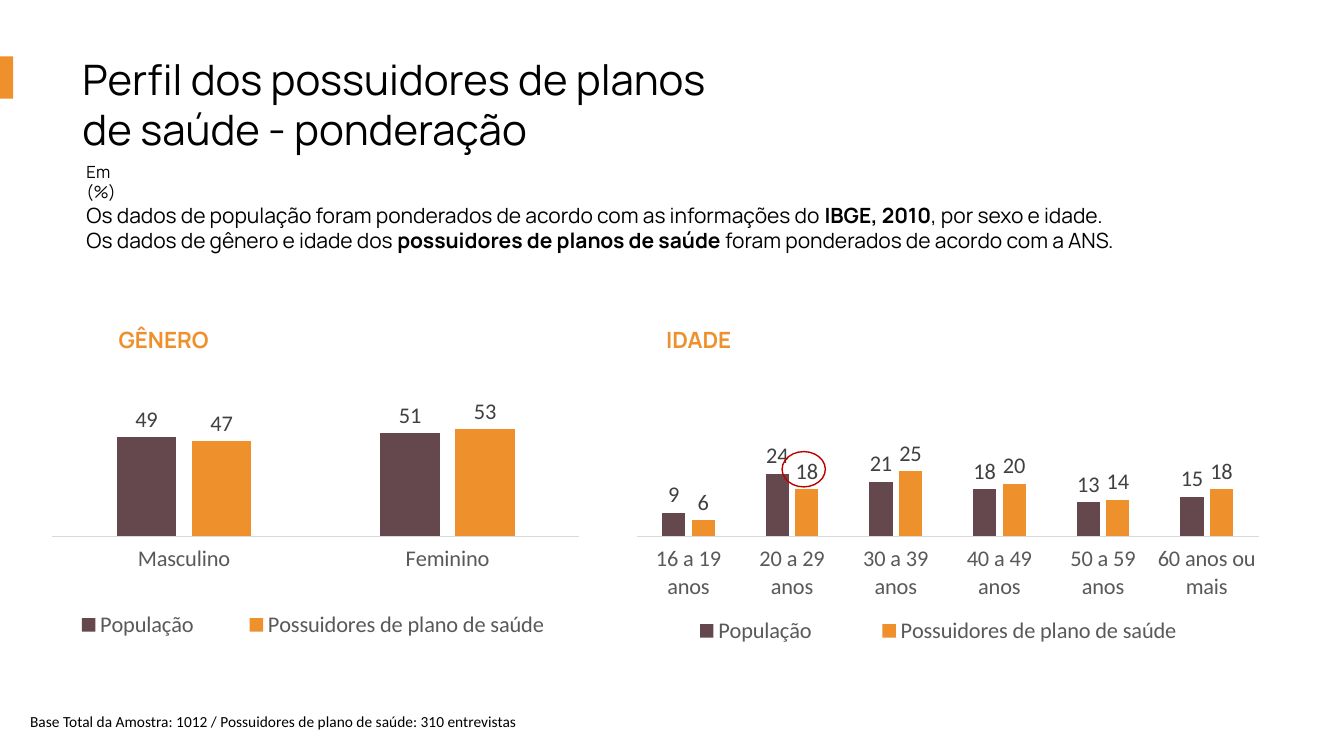
from pptx import Presentation
from pptx.chart.data import CategoryChartData
from pptx.dml.color import RGBColor
from pptx.enum.chart import (XL_CHART_TYPE as ChartType, XL_LABEL_POSITION as LabelPosition,
                             XL_LEGEND_POSITION as LegendPosition, XL_TICK_LABEL_POSITION as TickLabels,
                             XL_TICK_MARK as TickMark)
from pptx.enum.shapes import MSO_SHAPE as Preset
from pptx.oxml import parse_xml
from pptx.oxml.ns import nsdecls
from pptx.util import Cm, Pt

BLACK, PLUM, ORANGE, RED = "000000", "65484D", "EE902C", "C00000"
AXIS_TEXT, LABEL_TEXT, AXIS_LINE = "595959", "404040", "D9D9D9"


def set_font(font, color, **format_values):
    for name, value in format_values.items():
        setattr(font, name, value)
    font.color.rgb = RGBColor.from_string(color)


def fixed_layout(x, y, w, h, inner=False):
    """Return a c:layout element; lengths are fractions of the chart."""
    target = '<c:layoutTarget val="inner"/>' if inner else ""
    sizes = "".join(f'<c:{name} val="{value}"/>' for name, value in zip("xywh", (x, y, w, h)))
    return parse_xml(f'<c:layout {nsdecls("c")}><c:manualLayout>{target}<c:xMode val="edge"/>'
                     f'<c:yMode val="edge"/>{sizes}</c:manualLayout></c:layout>')


deck = Presentation()
deck.slide_width, deck.slide_height = Cm(33.87), Cm(19.05)
page = deck.slides.add_slide(deck.slide_layouts[6])

# Accent bar beside the title
bar = page.shapes.add_shape(Preset.RECTANGLE, Cm(0), Cm(1.42), Cm(0.33), Cm(1.07))
bar.shadow.inherit = False
bar.fill.solid()
bar.fill.fore_color.rgb = RGBColor.from_string(ORANGE)
bar.line.fill.background()

# Texts: place, font, size, colour, first span bold, paragraphs of spans alternating in weight
texts = [
    ((1.83, 1.22, 16.33, 2.82), "Manrope", 30, BLACK, False,
     [["Perfil dos possuidores de planos de saúde - ponderação"]]),
    ((1.93, 4.98, 28.07, 1.55), "Manrope", 15, BLACK, False,
     [["Os dados de população foram ponderados de acordo com as informações do ",
       "IBGE, 2010", ", por sexo e idade."],
      ["Os dados de gênero e idade dos ", "possuidores de planos de saúde ",
       "foram ponderados de acordo com a ANS."]]),
    ((1.93, 3.94, 1.83, 0.76), "Manrope", 12, BLACK, False, [["Em (%)"]]),
    ((0.51, 17.83, 15.93, 0.74), "Calibri", 11, BLACK, False,
     [["Base Total da Amostra: 1012 / Possuidores de plano de saúde: 310 entrevistas"]]),
    ((2.74, 8.1, 2.87, 0.94), "Manrope", 16, ORANGE, True, [["GÊNERO"]]),
    ((16.54, 8.1, 2.24, 0.94), "Manrope", 16, ORANGE, True, [["IDADE"]]),
]
for place, font_name, size, color, bold_first, paragraphs in texts:
    box = page.shapes.add_textbox(*map(Cm, place))
    frame = box.text_frame
    frame.word_wrap = True
    for number, spans in enumerate(paragraphs):
        para = frame.add_paragraph() if number else frame.paragraphs[0]
        for position, words in enumerate(spans):
            span = para.add_run()
            span.text = words
            bold = bold_first != (position % 2 == 1)
            set_font(span.font, color, name=font_name, size=Pt(size), bold=bold)

# Charts: left, width, categories, population, plan holders, plot area, legend area
charts = [
    (0.84, 14.1, ["Masculino", "Feminino"], [49, 51], [47, 53],
     (0.034, 0.188, 0.942, 0.501), (0, 0.865, 1, 0.09)),
    (16.03, 15.7, ["16 a 19 anos", "20 a 29 anos", "30 a 39 anos", "40 a 49 anos",
                   "50 a 59 anos", "60 anos ou mais"],
     [9, 24, 21, 18, 13, 15], [6, 18, 25, 20, 14, 18],
     (0, 0.045, 1, 0.644), (0, 0.88, 0.97, 0.09)),
]
chart_text = {"name": "Calibri", "size": Pt(16)}
for left, width, categories, population, holders, plot_area, legend_area in charts:
    data = CategoryChartData(number_format="####")
    data.categories = categories
    data.add_series("População", population)
    data.add_series("Possuidores de plano de saúde", holders)
    chart = page.shapes.add_chart(ChartType.COLUMN_CLUSTERED, Cm(left), Cm(6.53),
                                  Cm(width), Cm(10.13), data).chart
    chart.has_title = False
    set_font(chart.font, BLACK, name="Calibri", size=Pt(10))

    chart.has_legend = True
    chart.legend.position = LegendPosition.BOTTOM
    chart.legend.include_in_layout = False
    set_font(chart.legend.font, AXIS_TEXT, **chart_text)

    category_axis, value_axis = chart.category_axis, chart.value_axis
    category_axis.major_tick_mark = TickMark.NONE
    category_axis.tick_label_position = TickLabels.LOW
    category_axis.format.line.color.rgb = RGBColor.from_string(AXIS_LINE)
    category_axis.format.line.width = Pt(0.75)
    set_font(category_axis.tick_labels.font, AXIS_TEXT, **chart_text)
    value_axis.minimum_scale, value_axis.maximum_scale = 0, 100
    value_axis.has_major_gridlines = False
    value_axis.visible = False

    plot = chart.plots[0]
    plot.gap_width, plot.overlap, plot.vary_by_categories = 219, -27, False
    for series, color in zip(plot.series, (PLUM, ORANGE)):
        series.format.fill.solid()
        series.format.fill.fore_color.rgb = RGBColor.from_string(color)
        labels = series.data_labels
        labels.show_value = True
        labels.position = LabelPosition.OUTSIDE_END
        labels.number_format, labels.number_format_is_linked = "####", False
        set_font(labels.font, LABEL_TEXT, **chart_text)

    plot_element = chart.element.xpath("c:chart/c:plotArea")[0]
    legend_element = chart.element.xpath("c:chart/c:legend")[0]
    for old_layout in chart.element.xpath("c:chart/*/c:layout"):
        old_layout.getparent().remove(old_layout)
    plot_element.insert(0, fixed_layout(*plot_area, inner=True))
    legend_element.insert(1, fixed_layout(*legend_area))

# Ring around the value for plan holders aged 20 to 29
ring = page.shapes.add_shape(Preset.OVAL, Cm(19.71), Cm(11.38), Cm(1.09), Cm(0.89))
ring.shadow.inherit = False
ring.fill.background()
ring.line.color.rgb = RGBColor.from_string(RED)
ring.line.width = Pt(1)

deck.save("out.pptx")
